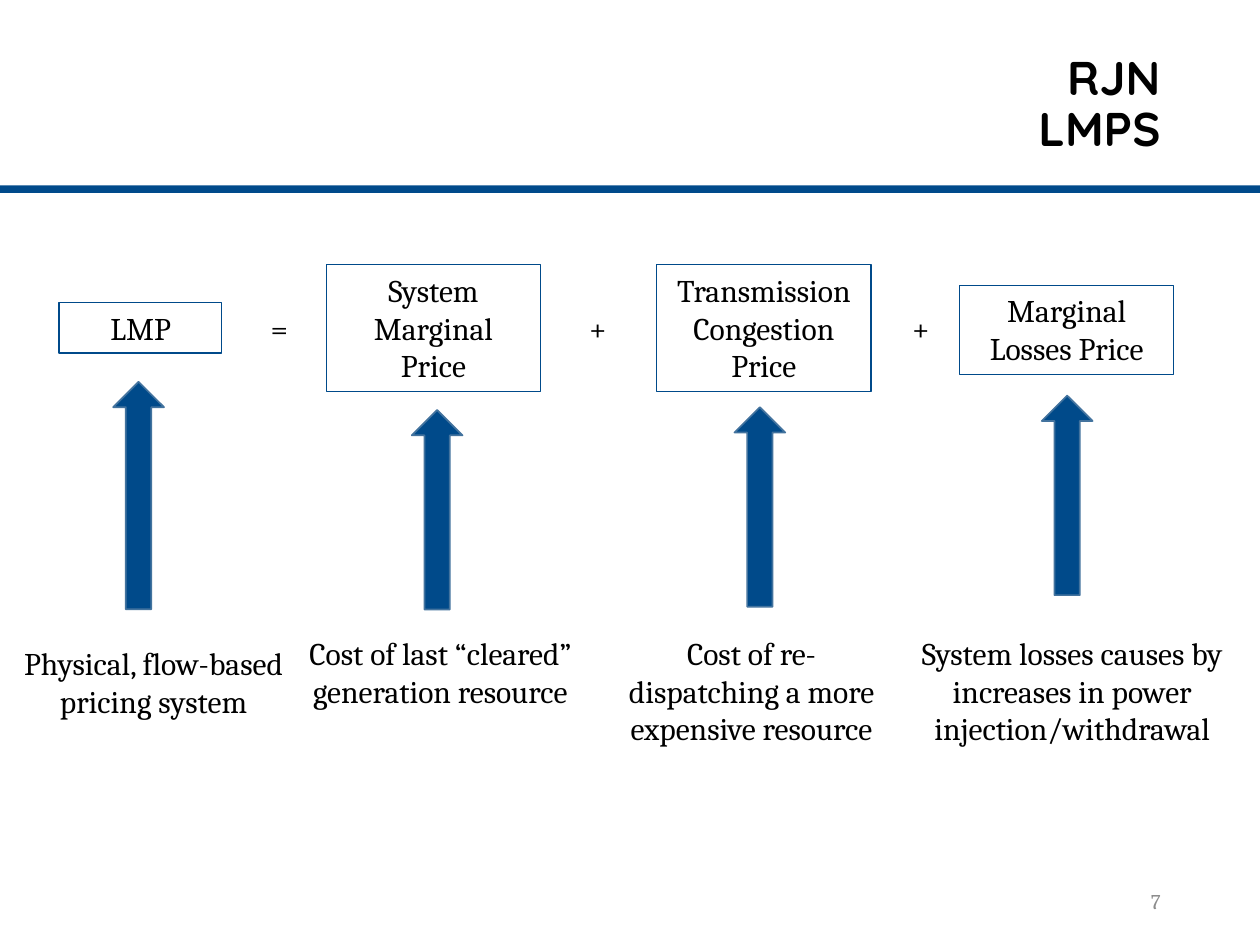
import pptx
import pptx.util
import pptx.dml.color
import pptx.enum.shapes
import pptx.enum.text

Pt = pptx.util.Pt
Shape = pptx.enum.shapes.MSO_SHAPE
Align = pptx.enum.text.PP_ALIGN
Anchor = pptx.enum.text.MSO_ANCHOR


def rgb(value):
    return pptx.dml.color.RGBColor.from_string(value)


def write(box, text, color="000000", align=Align.CENTER, anchor=Anchor.TOP, **changes):
    frame = box.text_frame
    frame.word_wrap = True
    frame.auto_size = pptx.enum.text.MSO_AUTO_SIZE.NONE
    frame.vertical_anchor = anchor
    frame.text = text
    para = frame.paragraphs[0]
    para.alignment = align
    font_format = {"name": "Cambria", "size": Pt(18), "bold": False} | changes
    for name, value in font_format.items():
        setattr(para.font, name, value)
    para.font.color.rgb = rgb(color)
    return para


deck = pptx.Presentation()
deck.slide_width, deck.slide_height = Pt(720), Pt(540)
page = deck.slides.add_slide(deck.slide_layouts[5])

# Rule under the title
rule = page.shapes.add_shape(Shape.RECTANGLE, Pt(0), Pt(106), Pt(720), Pt(4.3))
rule.shadow.inherit = False
rule.fill.solid()
rule.fill.fore_color.rgb = rgb("004A8B")
rule.line.fill.background()

# Title
title = page.shapes.title
title.left, title.top, title.width, title.height = Pt(142), Pt(29), Pt(528.3), Pt(63)
para = write(title, "RJN\vLMPS", align=Align.RIGHT, anchor=Anchor.MIDDLE,
             name="Quicksand", size=Pt(27), bold=True)
para.line_spacing = 0.9

# Terms of the price equation: text, left, top, width, height
terms = [
    ("LMP", 33.8, 172.8, 93, 29),
    ("System Marginal Price", 186.5, 151.2, 122.4, 72.7),
    ("Transmission Congestion Price", 375.3, 151.2, 122.4, 72.7),
    ("Marginal Losses Price", 548.4, 163, 122.4, 51),
]
for text, *frame in terms:
    term = page.shapes.add_shape(Shape.RECTANGLE, *map(Pt, frame))
    term.shadow.inherit = False
    term.fill.background()
    term.line.color.rgb = rgb("004A8A")
    term.line.width = Pt(0.75)
    write(term, text)

# Signs between the terms
for sign, left in [("=", 98.4), ("+", 280.5), ("+", 465)]:
    write(page.shapes.add_textbox(Pt(left), Pt(172.8), Pt(122.4), Pt(29)), sign)

# Arrows up to the terms: centre, top, height
arrow_width = 29
for center, top, height in [(79.2, 218.2, 130), (249.8, 234.3, 114),
                            (434.2, 232.7, 114), (609.8, 226.1, 114)]:
    arrow = page.shapes.add_shape(Shape.UP_ARROW, Pt(center - arrow_width / 2), Pt(top),
                                  Pt(arrow_width), Pt(height))
    arrow.shadow.inherit = False
    arrow.fill.solid()
    arrow.fill.fore_color.rgb = rgb("004A8A")
    arrow.line.color.rgb = rgb("43739E")
    arrow.line.width = Pt(1)

# Explanations below the arrows: text, left, top, width, height
explanations = [
    ("Physical, flow-based pricing system", 1.4, 364.3, 172.8, 72.7),
    ("Cost of last “cleared” generation resource", 165.3, 358.6, 172.8, 72.7),
    ("Cost of re-dispatching a more expensive resource", 352.1, 358.6, 154.8, 94.3),
    ("System losses causes by increases in power injection/withdrawal",
     511.2, 358.6, 203, 72.7),
]
for text, *frame in explanations:
    write(page.shapes.add_textbox(*map(Pt, frame)), text)

# Page number
number = page.shapes.add_textbox(Pt(508.3), Pt(500.5), Pt(162), Pt(28.8))
write(number, "7", color="8C8C8C", align=Align.RIGHT, anchor=Anchor.MIDDLE, size=Pt(12))

deck.save("out.pptx")
